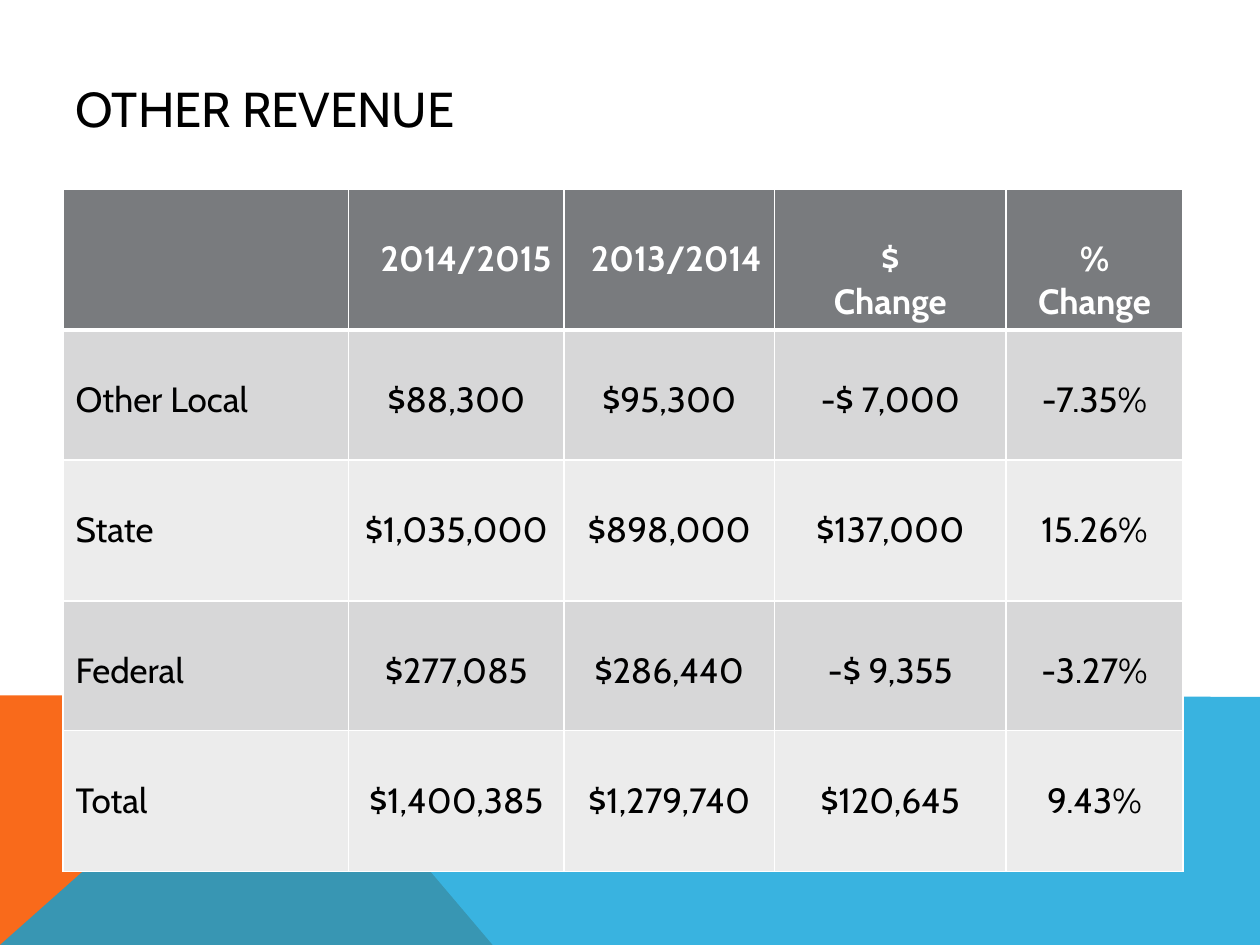
from dataclasses import dataclass

from lxml import etree
from pptx import Presentation
from pptx.dml.color import RGBColor
from pptx.enum.text import MSO_ANCHOR, PP_ALIGN
from pptx.oxml.ns import qn
from pptx.util import Pt

LEFT, CENTER, RIGHT = PP_ALIGN.LEFT, PP_ALIGN.CENTER, PP_ALIGN.RIGHT
MIDDLE = MSO_ANCHOR.MIDDLE
FONT = "Cabin"
COLORS = {
    "white": "FFFFFF", "black": "000000", "orange": "F96A1B", "blue": "08A1D9",
    "head": "797B7E", "odd": "D7D7D8", "even": "ECECEC",
}
WIDTHS = [163.2, 123.2, 120.2, 132.4, 101]
TALL, SHORT = 80.6, 74.2
TOP_GAP = 28  # one text line plus the normal cell margin


@dataclass
class Band:
    points: list[tuple[float, float]]
    color: str
    alpha: int = 100


@dataclass
class Row:
    texts: list[str]
    height: float
    aligns: list
    fill: str
    ink: str = "black"
    bold: bool = False
    top: int = 1
    bottom: int = 1


BANDS = [
    Band([(0, 540), (0, 397.4), (160.6, 397.4), (281.5, 540)], "orange"),
    Band([(0, 540), (160.6, 397.4), (720, 398.2), (720, 540)], "blue", 80),
]
BODY = [LEFT] + [CENTER] * 4
ROWS = [
    Row(["", "2014/2015", "2013/2014", "$\nChange", "%\nChange"], TALL,
        [LEFT, RIGHT, RIGHT, CENTER, CENTER], "head", "white", True, bottom=3),
    Row(["Other Local", "$88,300", "$95,300", "-$ 7,000", "-7.35%"],
        SHORT, BODY, "odd", top=3),
    Row(["State", "$1,035,000", "$898,000", "$137,000", "15.26%"],
        TALL, BODY, "even"),
    Row(["Federal", "$277,085", "$286,440", "-$ 9,355", "-3.27%"],
        SHORT, BODY, "odd"),
    Row(["Total", "$1,400,385", "$1,279,740", "$120,645", "9.43%"],
        TALL, BODY, "even"),
]


def rgb(name: str) -> RGBColor:
    return RGBColor.from_string(COLORS[name])


def add_run(para, text: str, size: float, ink: str, bold: bool = False) -> None:
    run = para.add_run()
    run.text = text
    font = run.font
    font.name, font.size, font.bold = FONT, Pt(size), bold
    font.color.rgb = rgb(ink)


def draw_band(slide, band: Band) -> None:
    dots = [(Pt(x), Pt(y)) for x, y in band.points]
    pen = slide.shapes.build_freeform(*dots[0])
    pen.add_line_segments(dots[1:], close=True)
    shape = pen.convert_to_shape()
    shape.shadow.inherit = False
    shape.line.fill.background()
    shape.fill.solid()
    shape.fill.fore_color.rgb = rgb(band.color)
    if band.alpha < 100:
        tint = shape.fill._xPr.find(".//" + qn("a:srgbClr"))
        etree.SubElement(tint, qn("a:alpha"), val=str(band.alpha * 1000))


def set_edges(cell, top: int, bottom: int) -> None:
    props = cell._tc.get_or_add_tcPr()
    for side, width in (("L", 1), ("R", 1), ("T", top), ("B", bottom)):
        line = etree.SubElement(props, qn("a:ln" + side), w=str(Pt(width)))
        fill = etree.SubElement(line, qn("a:solidFill"))
        etree.SubElement(fill, qn("a:srgbClr"), val=COLORS["white"])


def fill_cell(cell, text: str, align, row: Row) -> None:
    set_edges(cell, row.top, row.bottom)
    cell.fill.solid()
    cell.fill.fore_color.rgb = rgb(row.fill)
    cell.margin_top = Pt(TOP_GAP)
    if not text:
        return
    frame = cell.text_frame
    for i, line in enumerate(text.split("\n")):
        para = frame.add_paragraph() if i else frame.paragraphs[0]
        para.alignment = align
        add_run(para, line, 20, row.ink, row.bold)


def draw_table(slide, rows: list[Row]) -> None:
    high = sum(row.height for row in rows)
    table = slide.shapes.add_table(
        len(rows), len(WIDTHS), Pt(36), Pt(108), Pt(sum(WIDTHS)), Pt(high)
    ).table
    for col, width in zip(table.columns, WIDTHS):
        col.width = Pt(width)
    for r, row in enumerate(rows):
        table.rows[r].height = Pt(row.height)
        for c, (text, align) in enumerate(zip(row.texts, row.aligns)):
            fill_cell(table.cell(r, c), text, align, row)


def draw_title(slide, text: str) -> None:
    title = slide.shapes.title
    title.left, title.top = Pt(36), Pt(21.6)
    title.width, title.height = Pt(600), Pt(80.6)
    title.text_frame.vertical_anchor = MIDDLE
    para = title.text_frame.paragraphs[0]
    para.alignment = LEFT
    add_run(para, text, 28, "black")


def main() -> None:
    deck = Presentation()
    deck.slide_width, deck.slide_height = Pt(720), Pt(540)
    slide = deck.slides.add_slide(deck.slide_layouts[5])

    # Colour bands along the bottom
    for band in BANDS:
        draw_band(slide, band)

    # Title and revenue table
    draw_title(slide, "OTHER REVENUE")
    draw_table(slide, ROWS)
    deck.save("out.pptx")


if __name__ == "__main__":
    main()
